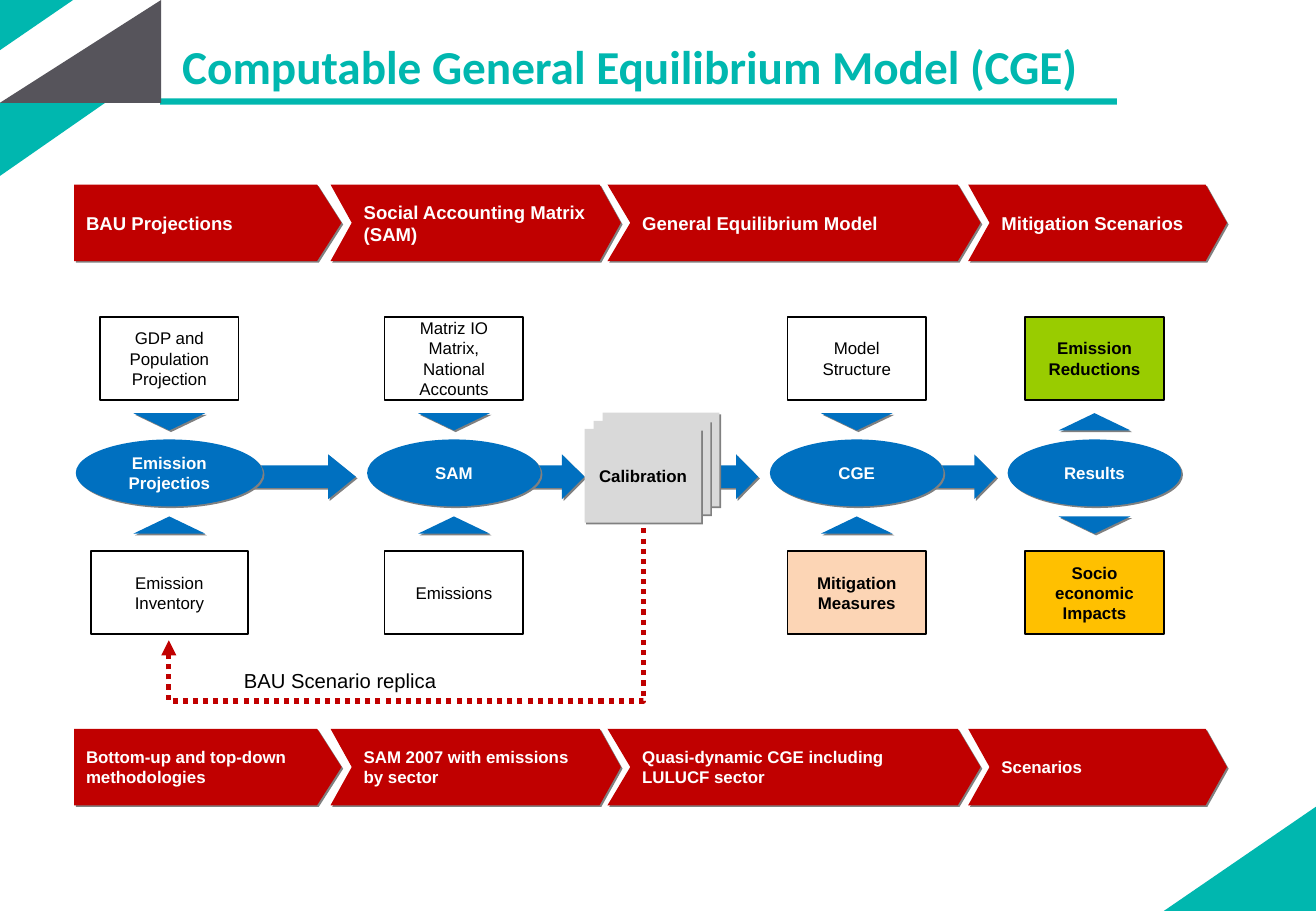
from collections import namedtuple

from lxml import etree
from pptx import Presentation
from pptx.dml.color import RGBColor
from pptx.enum import dml, shapes, text
from pptx.oxml import ns
from pptx.util import Cm, Pt

COLORS = {
    "teal": "00B7AF", "slate": "56545B", "red": "C00000", "blue": "0070C0",
    "paper": "D9D9D9", "shade": "808080", "white": "FFFFFF", "black": "000000",
    "green": "99CC00", "amber": "FFC000", "peach": "FCD5B5",
}
KIND = shapes.MSO_SHAPE
Box = namedtuple("Box", "left top width height")  # centimetres
Banner = namedtuple("Banner", "left width point")

PAGE = Box(0, 0, 27.51, 19.05)
BANNERS = [Banner(0, 5.59, 0.319), Banner(5.36, 6.07, 0.278),
           Banner(11.15, 7.8, 0.298), Banner(18.69, 5.41, 0.279)]
TOPICS = ["BAU Projections", "Social Accounting Matrix (SAM)",
          "General Equilibrium Model", "Mitigation Scenarios"]
METHODS = ["Bottom-up and top-down methodologies", "SAM 2007 with emissions by sector",
           "Quasi-dynamic CGE including LULUCF sector", "Scenarios"]


def color(name):
    return RGBColor.from_string(COLORS[name])


def add_effect(shape, shadow):
    """Give the shape a hard shadow down to the right, or none at all."""
    shape.shadow.inherit = False
    if shadow:
        effects = shape._element.spPr.find(ns.qn("a:effectLst"))
        outer = etree.SubElement(effects, ns.qn("a:outerShdw"), dist="17960",
                                 dir="2700000", algn="ctr", rotWithShape="0")
        etree.SubElement(outer, ns.qn("a:srgbClr"), val=COLORS["shade"])


def paint(shape, fill=None, line=None, width=1, shadow=False):
    if fill:
        shape.fill.solid()
        shape.fill.fore_color.rgb = color(fill)
    else:
        shape.fill.background()
    if line:
        shape.line.color.rgb = color(line)
        shape.line.width = Pt(width)
    else:
        shape.line.fill.background()
    add_effect(shape, shadow)


def add_block(page, kind, box, adjust=None, **look):
    shape = page.shapes.add_shape(kind, *map(Cm, box))
    if adjust is not None:
        shape.adjustments[0] = adjust
    paint(shape, **look)
    return shape


def add_outline(page, points, closed=True, **look):
    corners = [(Cm(x), Cm(y)) for x, y in points]
    builder = page.shapes.build_freeform(*corners[0])
    builder.add_line_segments(corners[1:], close=closed)
    shape = builder.convert_to_shape()
    paint(shape, **look)
    return shape


def write(shape, words, size=10, bold=False, ink="black", font="Arial", align="CENTER",
          anchor="MIDDLE", wrap=True, inset=(0.25, 0.13)):
    frame = shape.text_frame
    frame.word_wrap = wrap
    frame.margin_left = frame.margin_right = Cm(inset[0])
    frame.margin_top = frame.margin_bottom = Cm(inset[1])
    frame.vertical_anchor = getattr(text.MSO_ANCHOR, anchor)
    para = frame.paragraphs[0]
    para.alignment = getattr(text.PP_ALIGN, align)
    span = para.add_run()
    span.text = words
    span.font.name, span.font.size, span.font.bold = font, Pt(size), bold
    span.font.color.rgb = color(ink)


def add_label(page, box, words, **style):
    label = page.shapes.add_textbox(*map(Cm, box))
    write(label, words, align="LEFT", anchor="TOP", wrap=False, **style)
    label.text_frame.auto_size = text.MSO_AUTO_SIZE.SHAPE_TO_FIT_TEXT


def add_corners(page, box):
    left, top = box.left, box.top
    right, bottom = left + box.width, top + box.height
    fold = top + 2.15
    add_outline(page, [(left, top), (left + 1.53, top), (left, top + 1.05)], fill="teal")
    add_outline(page, [(left, fold), (left + 2.2, fold), (left, fold + 1.53)], fill="teal")
    add_outline(page, [(right, bottom - 2.18), (right, bottom), (right - 3.18, bottom)],
                fill="teal")
    add_outline(page, [(left + 3.37, top), (left + 3.37, fold), (left, fold)], fill="slate")


def add_heading(page, box, words):
    rule = Box(box.left, box.top + box.height, box.width, 0.13)
    add_block(page, KIND.RECTANGLE, rule, fill="teal")
    add_label(page, Box(box.left + 0.21, box.top, 19.43, 1.45), words,
              size=28, bold=True, ink="teal", font="Calibri")


def add_banners(page, box, titles, size):
    for index, (banner, title) in enumerate(zip(BANNERS, titles)):
        kind = KIND.CHEVRON if index else KIND.PENTAGON
        place = Box(box.left + banner.left, box.top, banner.width, box.height)
        shape = add_block(page, kind, place, banner.point, fill="red", shadow=True)
        write(shape, title, size=size, bold=True, ink="white", align="LEFT",
              inset=(0.25, 0.25))


def add_flow_arrows(page, box):
    for left, width, head in [(0, 3.02, 0.618), (5.36, 2.44, 0.502),
                              (9.4, 2.03, 0.492), (14.38, 2.03, 0.492)]:
        arrow = add_block(page, KIND.RIGHT_ARROW,
                          Box(box.left + left, box.top, width, box.height),
                          fill="blue", shadow=True)
        arrow.adjustments[1] = head


def add_feedback(page, box, words):
    """Dotted path from the calibration back to the inventory."""
    right, bottom = box.left + box.width, box.top + box.height
    loop = add_outline(page, [(right, box.top), (right, bottom), (box.left, bottom),
                              (box.left, bottom - 1.27)],
                       closed=False, line="red", width=3)
    loop.line.dash_style = dml.MSO_LINE.ROUND_DOT
    etree.SubElement(loop.line._get_or_add_ln(), ns.qn("a:tailEnd"), type="triangle")
    add_label(page, Box(box.left + 1.32, bottom - 0.82, 4.57, 0.76), words, size=12)


def add_stage(page, box, core, upper, lower, fills=("white", "white"), bolds=(False, False),
              core_width=3.63, lower_width=2.9, outward=False):
    """A column: upper box, core ellipse, lower box, with triangles between."""
    middle = box.left + box.width / 2

    def centred(offset, width, height):
        return Box(middle - width / 2, box.top + offset, width, height)

    for offset, points_down in [(2.01, not outward), (4.17, outward)]:
        pointer = add_block(page, KIND.ISOSCELES_TRIANGLE, centred(offset, 1.5, 0.36),
                            fill="blue", shadow=True)
        pointer.rotation = 180 if points_down else 0
    rows = zip((0, 4.9), (box.width, lower_width), (upper, lower), fills, bolds)
    for offset, width, words, fill, bold in rows:
        card = add_block(page, KIND.RECTANGLE, centred(offset, width, 1.73),
                         fill=fill, line="black")
        write(card, words, bold=bold)
    ellipse = add_block(page, KIND.OVAL, centred(2.56, core_width, 1.4),
                        fill="blue", shadow=True)
    write(ellipse, core, bold=True, ink="white", inset=(0.1, 0.25))


def add_calibration(page, box, words):
    for step in (2, 1, 0):
        sheet = add_block(page, KIND.RECTANGLE,
                          Box(box.left + step * 0.19, box.top - step * 0.17,
                              box.width, box.height), fill="paper", shadow=True)
    write(sheet, words, bold=True, wrap=False, inset=(0.25, 0.25))


def main():
    deck = Presentation()
    deck.slide_width, deck.slide_height = Cm(PAGE.width), Cm(PAGE.height)
    page = deck.slides.add_slide(deck.slide_layouts[6])

    add_heading(page, Box(3.35, 0.64, 20, 1.42), "Computable General Equilibrium Model (CGE)")
    add_corners(page, PAGE)
    add_banners(page, Box(1.55, 3.86, 24.1, 1.6), TOPICS, size=11)
    add_banners(page, Box(1.55, 15.24, 24.1, 1.6), METHODS, size=10)
    add_flow_arrows(page, Box(4.42, 9.5, 16.41, 0.94))
    add_feedback(page, Box(3.53, 11.05, 9.93, 3.61), "BAU Scenario replica")
    add_stage(page, Box(2.09, 6.63, 2.9, 6.63), "Emission Projectios",
              "GDP and Population Projection", "Emission Inventory",
              core_width=3.91, lower_width=3.28)
    add_stage(page, Box(8.04, 6.63, 2.9, 6.63), "SAM",
              "Matriz IO Matrix, National Accounts", "Emissions", fills=("white", None))
    add_stage(page, Box(16.46, 6.63, 2.9, 6.63), "CGE", "Model Structure",
              "Mitigation Measures", fills=("white", "peach"), bolds=(False, True))
    add_stage(page, Box(21.43, 6.63, 2.9, 6.63), "Results", "Emission Reductions",
              "Socio economic Impacts", fills=("green", "amber"), bolds=(True, True),
              outward=True)
    add_calibration(page, Box(12.22, 8.97, 2.44, 1.96), "Calibration")
    deck.save("out.pptx")


if __name__ == "__main__":
    main()
